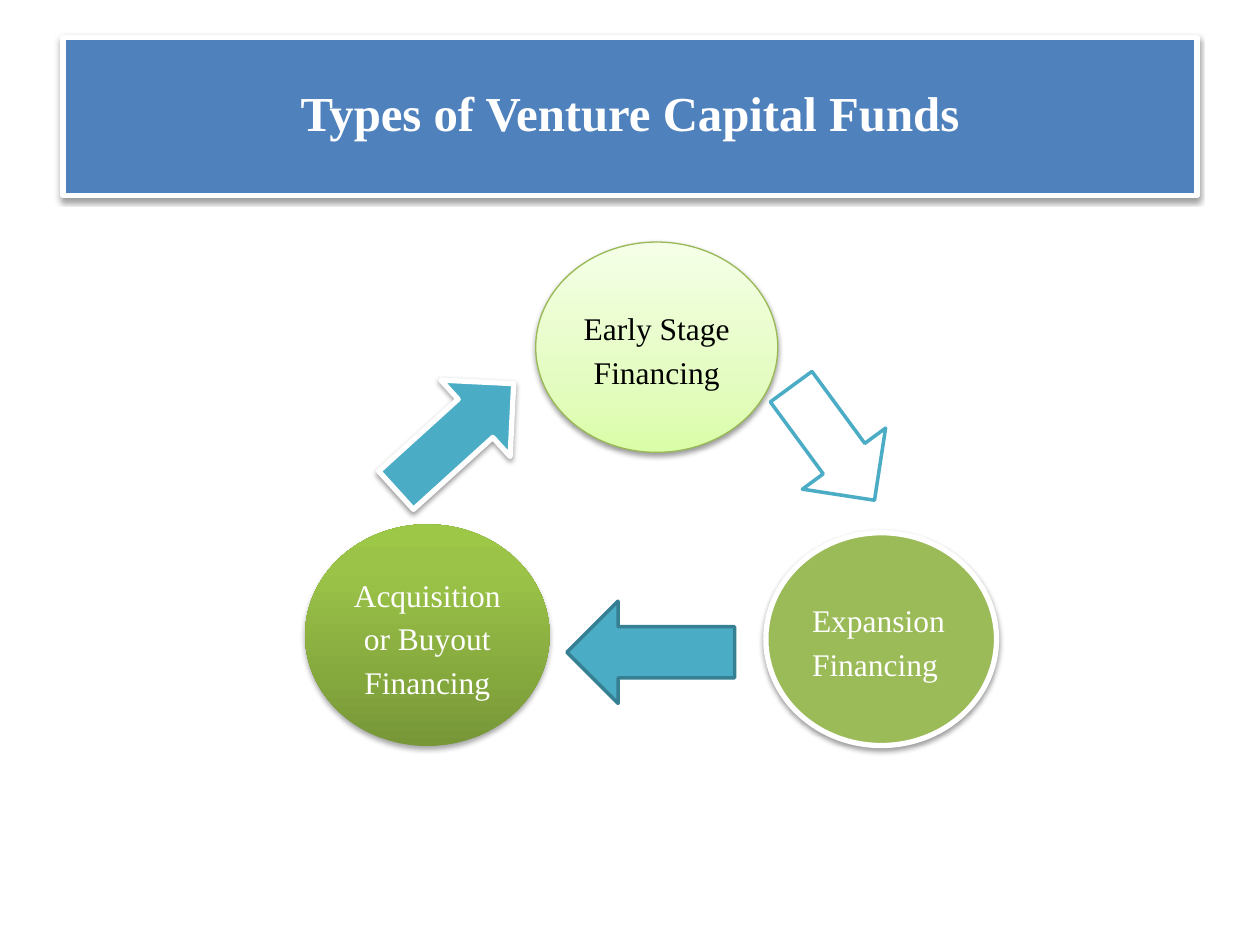
from lxml import etree
from pptx import Presentation
from pptx import util as u
from pptx.dml.color import RGBColor
from pptx.enum import shapes, text
from pptx.oxml.ns import qn

COLOURS = {
    "white": "FFFFFF", "black": "000000", "blue": "4F81BD",
    "green": "9BBB59", "green edge": "98B955",
    "teal": "4BACC6", "dark teal": "377F92",
}
# Gradient stops as (percent, colour), running from bottom to top
PALE_GREEN = [(0, "DAFDA7"), (35, "E4FCC2"), (100, "F5FFE7")]
DEEP_GREEN = [(0, "779737"), (80, "9BC348"), (100, "9DC746")]
FONT = "Times New Roman"
KIND = shapes.MSO_SHAPE
ALIGN = text.PP_ALIGN


def rgb(name):
    return RGBColor.from_string(COLOURS[name])


def add_child(parent, tag, **attributes):
    child = etree.SubElement(parent, qn(tag))
    for key, value in attributes.items():
        child.set(key, str(value))
    return child


def set_gradient(shape, stops):
    shape.fill.gradient()
    gradient = shape._element.spPr.find(qn("a:gradFill"))
    for child in list(gradient):
        gradient.remove(child)
    stop_list = add_child(gradient, "a:gsLst")
    for percent, colour in stops:
        stop = add_child(stop_list, "a:gs", pos=percent * 1000)
        add_child(stop, "a:srgbClr", val=colour)
    add_child(gradient, "a:lin", ang=270 * 60000, scaled=0)


def add_shadow(shape, opacity=38, distance=1.6):
    effects = shape._element.spPr.find(qn("a:effectLst"))
    shadow = add_child(effects, "a:outerShdw", blurRad=u.Pt(3.1),
                       dist=u.Pt(distance), dir=90 * 60000, rotWithShape=0)
    colour = add_child(shadow, "a:srgbClr", val=COLOURS["black"])
    add_child(colour, "a:alpha", val=opacity * 1000)


def add_figure(page, kind, place, fill, line=None, width=3, rotation=0):
    """Add a preset shape; fill is a colour name or a list of stops."""
    shape = page.shapes.add_shape(kind, *(u.Cm(length) for length in place))
    shape.shadow.inherit = False
    shape.rotation = rotation
    if isinstance(fill, str):
        shape.fill.solid()
        shape.fill.fore_color.rgb = rgb(fill)
    else:
        set_gradient(shape, fill)
    if line:
        shape.line.color.rgb = rgb(line)
        shape.line.width = u.Pt(width)
    else:
        shape.line.fill.background()
    return shape


def write(shape, words, size=18, colour="white", bold=False, align=ALIGN.CENTER):
    frame = shape.text_frame
    frame.word_wrap = True
    frame.vertical_anchor = text.MSO_ANCHOR.MIDDLE
    para = frame.paragraphs[0]
    para.alignment = align
    para.line_spacing = 1.15
    para.space_after = u.Pt(10)
    span = para.add_run()
    span.text = words
    span.font.name = FONT
    span.font.size = u.Pt(size)
    span.font.bold = bold
    span.font.color.rgb = rgb(colour)


def main():
    deck = Presentation()
    deck.slide_width, deck.slide_height = u.Cm(25.4), u.Cm(19.05)
    page = deck.slides.add_slide(deck.slide_layouts[6])

    # Title banner
    banner = add_figure(page, KIND.RECTANGLE, (1.27, 0.76, 22.86, 3.18),
                        "blue", "white")
    add_shadow(banner)
    write(banner, "Types of Venture Capital Funds", size=27.9, bold=True)
    banner.text_frame.margin_bottom = u.Cm(0.5)

    # Three kinds of financing
    early = add_figure(page, KIND.OVAL, (10.8, 4.88, 4.88, 4.24),
                       PALE_GREEN, "green edge", 0.75)
    add_shadow(early)
    write(early, "Early Stage Financing", colour="black")

    buyout = add_figure(page, KIND.OVAL, (6.15, 10.57, 4.93, 4.47), DEEP_GREEN)
    add_shadow(buyout, opacity=35, distance=1.8)
    write(buyout, "Acquisition or Buyout Financing")

    expansion = add_figure(page, KIND.OVAL, (15.44, 10.74, 4.65, 4.29),
                           "green", "white")
    add_shadow(expansion)
    write(expansion, "Expansion Financing", align=ALIGN.JUSTIFY)

    # Arrows of the cycle
    add_figure(page, KIND.DOWN_ARROW, (15.75, 7.52, 2.08, 2.84),
               "white", "teal", 2, rotation=323.7)
    add_figure(page, KIND.LEFT_ARROW, (11.43, 12.12, 3.38, 2.06),
               "teal", "dark teal", 2)
    rising = add_figure(page, KIND.UP_ARROW, (8.13, 7.21, 2.08, 3.2),
                        "teal", "white", rotation=47.8)
    add_shadow(rising)

    deck.save("out.pptx")


if __name__ == "__main__":
    main()
